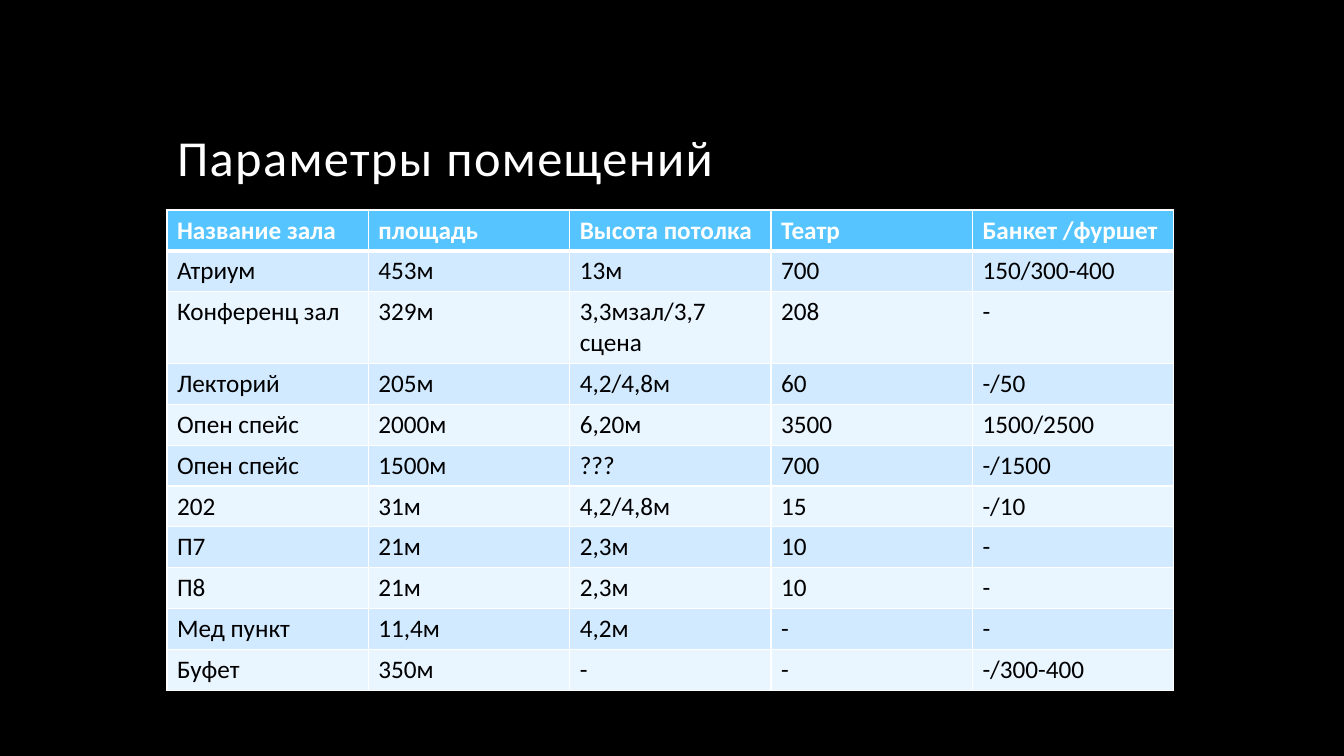
from lxml import etree
from pptx import Presentation
from pptx.dml.color import RGBColor
from pptx.enum.text import MSO_ANCHOR, PP_ALIGN
from pptx.oxml.ns import qn
from pptx.util import Pt

BOTTOM, LEFT = MSO_ANCHOR.BOTTOM, PP_ALIGN.LEFT
EMU_PER_PX = 12192000 / 1344
TITLE_ONLY = 5
FONT = "Calibri"
WHITE, BLACK = "FFFFFF", "000000"
HEADER_FILL, BAND_FILLS = "56C5FF", ("D1EAFF", "E9F5FF")

ROOMS = [
    ("Название зала", "площадь", "Высота потолка", "Театр", "Банкет /фуршет"),
    ("Атриум", "453м", "13м", "700", "150/300-400"),
    ("Конференц зал", "329м", "3,3мзал/3,7 сцена", "208", "-"),
    ("Лекторий", "205м", "4,2/4,8м", "60", "-/50"),
    ("Опен спейс", "2000м", "6,20м", "3500", "1500/2500"),
    ("Опен спейс", "1500м", "???", "700", "-/1500"),
    ("202", "31м", "4,2/4,8м", "15", "-/10"),
    ("П7", "21м", "2,3м", "10", "-"),
    ("П8", "21м", "2,3м", "10", "-"),
    ("Мед пункт", "11,4м", "4,2м", "-", "-"),
    ("Буфет", "350м", "-", "-", "-/300-400"),
]


def px(n):
    return round(n * EMU_PER_PX)


def rgb(color):
    return RGBColor.from_string(color)


def write(tf, text, size=18, color=BLACK, bold=False, line=None, spacing=None):
    p = tf.paragraphs[0]
    p.alignment = LEFT
    if line:
        p.line_spacing = line
    r = p.add_run()
    r.text = text
    r.font.name = FONT
    r.font.size = Pt(size)
    r.font.bold = bold
    r.font.color.rgb = rgb(color)
    if spacing:
        r.font._element.set("spc", str(spacing * 100))


def set_borders(cell, **widths):
    tcPr = cell._tc.get_or_add_tcPr()
    for side in "LRTB":
        ln = etree.SubElement(tcPr, qn(f"a:ln{side}"), w=str(Pt(widths.get(side, 1))))
        fill = etree.SubElement(ln, qn("a:solidFill"))
        etree.SubElement(fill, qn("a:srgbClr"), val=WHITE)


def add_title(s, text, x, y, w, h):
    sp = s.shapes.title
    sp.left, sp.top, sp.width, sp.height = px(x), px(y), px(w), px(h)
    tf = sp.text_frame
    tf.word_wrap = True
    tf.vertical_anchor = BOTTOM
    write(tf, text, size=36, color=WHITE, line=0.9, spacing=1)


def add_room_table(s, rows, x, y, w, h):
    table = s.shapes.add_table(len(rows), len(rows[0]), px(x), px(y), px(w), px(h)).table
    for i, row in enumerate(rows):
        header = i == 0
        for j, text in enumerate(row):
            cell = table.cell(i, j)
            # A thick rule separates the header from the first room
            set_borders(cell, T=3 if i == 1 else 1, B=3 if header else 1)
            cell.fill.solid()
            cell.fill.fore_color.rgb = rgb(HEADER_FILL if header else BAND_FILLS[(i - 1) % 2])
            write(cell.text_frame, text, color=WHITE if header else BLACK, bold=header)


def main():
    prs = Presentation()
    prs.slide_width, prs.slide_height = px(1344), px(756)
    s = prs.slides.add_slide(prs.slide_layouts[TITLE_ONLY])

    # Background
    s.background.fill.solid()
    s.background.fill.fore_color.rgb = rgb(BLACK)

    # Title and room table; the two-line row grows to fit its text
    add_title(s, "Параметры помещений", 167, 42, 1008, 151)
    add_room_table(s, ROOMS, 167, 210, 1007, 449)

    prs.save("out.pptx")


if __name__ == "__main__":
    main()
